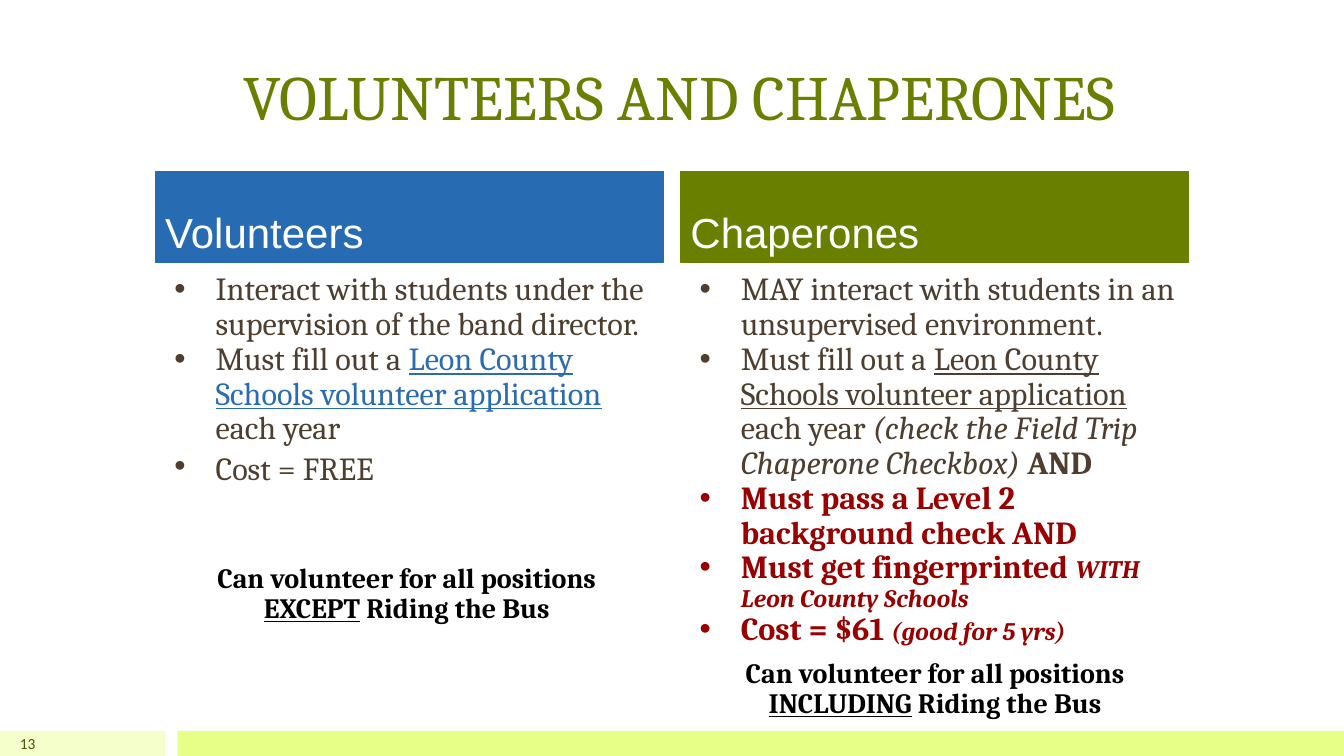
from dataclasses import dataclass

from lxml.etree import SubElement
from pptx import Presentation
from pptx.dml.color import RGBColor as Color
from pptx.enum.shapes import MSO_SHAPE as Shape
from pptx.enum.text import MSO_ANCHOR as Anchor, MSO_AUTO_SIZE as AutoSize, PP_ALIGN as Align
from pptx.oxml.ns import qn
from pptx.util import Inches, Pt


@dataclass(frozen=True)
class Theme:
    blue: str = "276CB2"
    link: str = "2A6CB2"
    green: str = "687F00"
    dark_green: str = "455500"
    pale_lime: str = "F4FFCB"
    lime: str = "E8FF87"
    brown: str = "4D3E2F"
    red: str = "990000"
    black: str = "000000"
    white: str = "FFFFFF"
    serif: str = "Cambria"
    sans: str = "Arial"
    number_font: str = "Calibri"
    spacer_font: str = "Lato"
    title_size: int = 45
    heading_size: int = 30
    spacer_size: int = 28
    body_size: int = 23
    note_size: int = 20
    small_size: int = 18
    number_size: int = 11


@dataclass(frozen=True)
class Box:
    left: float
    top: float
    width: float
    height: float

    def inches(self):
        return [Inches(n) for n in (self.left, self.top, self.width, self.height)]

    def inner(self, left, top, width, height):
        """A box placed relative to this one's top left corner."""
        return Box(self.left + left, self.top + top, width, height)


THEME = Theme()
SLIDE = Box(0, 0, 13.33, 7.5)
COLUMN_LEFT, COLUMN_TOP = 1.54, 1.7
COLUMN_WIDTH, COLUMN_HEIGHT, COLUMN_GAP = 5.04, 5.51, 0.17
HEADING_HEIGHT, BODY_TOP, BODY_HEIGHT = 0.9, 0.96, 4.17
FOOTER_HEIGHT = 0.25

SMALL = {"size": THEME.small_size, "italic": True}
APPLICATION = "Leon County Schools volunteer application"

# Each bullet is its colour and its runs; each run is text and what differs.
COLUMNS = [
    {
        "heading": "Volunteers",
        "fill": THEME.blue,
        "bullets": [
            (THEME.brown, [("Interact with students under the supervision of the band director.", {})]),
            (THEME.brown, [("Must fill out a ", {}),
                           (APPLICATION, {"color": THEME.link, "underline": True}),
                           (" each year", {})]),
            (THEME.brown, [("Cost = FREE", {}),
                           (" ", {"size": THEME.spacer_size, "font": THEME.spacer_font})]),
        ],
        "exception": "EXCEPT",
        "note": (0, 3.74, 4.99, 1.03),
    },
    {
        "heading": "Chaperones",
        "fill": THEME.green,
        "bullets": [
            (THEME.brown, [("MAY interact with students in an unsupervised environment.", {})]),
            (THEME.brown, [("Must fill out a ", {}),
                           (APPLICATION, {"underline": True}),
                           (" each year ", {}),
                           ("(check the Field Trip Chaperone Checkbox) ", {"italic": True}),
                           ("AND", {"bold": True})]),
            (THEME.red, [("Must pass a Level 2 background check AND", {"bold": True})]),
            (THEME.red, [("Must get fingerprinted ", {"bold": True}),
                         ("WITH Leon County Schools", {"bold": True, **SMALL})]),
            (THEME.red, [("Cost = $61 ", {"bold": True}),
                         ("(good for 5 yrs)", {"bold": True, **SMALL})]),
        ],
        "exception": "INCLUDING",
        "note": (0.03, 4.68, 4.99, 0.83),
    },
]


def format_run(run, size, color, font=THEME.serif, bold=False, italic=False, underline=False):
    run.font.size = Pt(size)
    run.font.name = font
    run.font.color.rgb = Color.from_string(color)
    run.font.bold, run.font.italic, run.font.underline = bold, italic, underline


def add_runs(paragraph, runs, **base):
    for text, changes in runs:
        run = paragraph.add_run()
        run.text = text
        format_run(run, **{**base, **changes})


def set_frame(shape, anchor=Anchor.TOP, inset_x=0.1, inset_y=0.05):
    frame = shape.text_frame
    frame.word_wrap = True
    frame.auto_size = AutoSize.NONE
    frame.vertical_anchor = anchor
    frame.margin_left = frame.margin_right = Inches(inset_x)
    frame.margin_top = frame.margin_bottom = Inches(inset_y)
    return frame


def add_line(frame, text, align, **style):
    paragraph = frame.paragraphs[0]
    paragraph.text = text
    paragraph.alignment = align
    format_run(paragraph.runs[0], **style)


def add_block(slide, box, fill):
    block = slide.shapes.add_shape(Shape.RECTANGLE, *box.inches())
    block.shadow.inherit = False
    block.fill.solid()
    block.fill.fore_color.rgb = Color.from_string(fill)
    block.line.fill.background()
    return block


def set_bullet(paragraph, color):
    properties = paragraph._p.get_or_add_pPr()
    properties.set("marL", str(Inches(0.5)))
    properties.set("indent", str(Inches(-0.41)))
    bullet_color = SubElement(properties, qn("a:buClr"))
    SubElement(bullet_color, qn("a:srgbClr"), val=color)
    SubElement(properties, qn("a:buFont"), typeface=THEME.sans)
    SubElement(properties, qn("a:buChar"), char="•")


def add_title(slide, box, text):
    title = slide.shapes.title
    title.left, title.top, title.width, title.height = box.inches()
    add_line(set_frame(title, Anchor.MIDDLE), text, Align.CENTER,
             size=THEME.title_size, color=THEME.green)


def add_footer(slide, box, number):
    # Colour bands
    add_block(slide, box.inner(0, 0, 1.64, box.height), THEME.pale_lime)
    add_block(slide, box.inner(1.76, 0, box.width - 1.76, box.height), THEME.lime)
    # Slide number
    label = slide.shapes.add_textbox(*box.inner(0, 0, 0.45, box.height).inches())
    add_line(set_frame(label, Anchor.MIDDLE), number, Align.RIGHT,
             size=THEME.number_size, color=THEME.dark_green, font=THEME.number_font)


def add_column(slide, box, content):
    # Heading band
    heading = add_block(slide, box.inner(0, 0, box.width, HEADING_HEIGHT), content["fill"])
    heading.line.color.rgb = Color.from_string(content["fill"])
    heading.line.width = Pt(1)
    add_line(set_frame(heading, Anchor.BOTTOM), content["heading"], Align.LEFT,
             size=THEME.heading_size, color=THEME.white, font=THEME.sans)
    # Bullet list
    body = slide.shapes.add_textbox(*box.inner(0, BODY_TOP, box.width, BODY_HEIGHT).inches())
    frame = set_frame(body)
    for index, (color, runs) in enumerate(content["bullets"]):
        paragraph = frame.add_paragraph() if index else frame.paragraphs[0]
        set_bullet(paragraph, color)
        paragraph.line_spacing = 0.9
        add_runs(paragraph, runs, size=THEME.body_size, color=color)
    # Closing note
    note = slide.shapes.add_textbox(*box.inner(*content["note"]).inches())
    paragraph = set_frame(note, inset_x=0.16, inset_y=0.16).paragraphs[0]
    paragraph.alignment = Align.CENTER
    paragraph.line_spacing = 0.9
    runs = [("Can volunteer for all positions ", {}),
            (content["exception"], {"underline": True}),
            (" Riding the Bus", {})]
    add_runs(paragraph, runs, size=THEME.note_size, color=THEME.black, bold=True)


def main():
    presentation = Presentation()
    presentation.slide_width = Inches(SLIDE.width)
    presentation.slide_height = Inches(SLIDE.height)
    slide = presentation.slides.add_slide(presentation.slide_layouts.get_by_name("Title Only"))
    add_footer(slide, Box(0, SLIDE.height - FOOTER_HEIGHT, SLIDE.width, FOOTER_HEIGHT), "13")
    add_title(slide, Box(1.14, 0.3, 11.19, 1.29), "VOLUNTEERS AND CHAPERONES")
    for index, content in enumerate(COLUMNS):
        left = COLUMN_LEFT + index * (COLUMN_WIDTH + COLUMN_GAP)
        add_column(slide, Box(left, COLUMN_TOP, COLUMN_WIDTH, COLUMN_HEIGHT), content)
    presentation.save("out.pptx")


if __name__ == "__main__":
    main()
